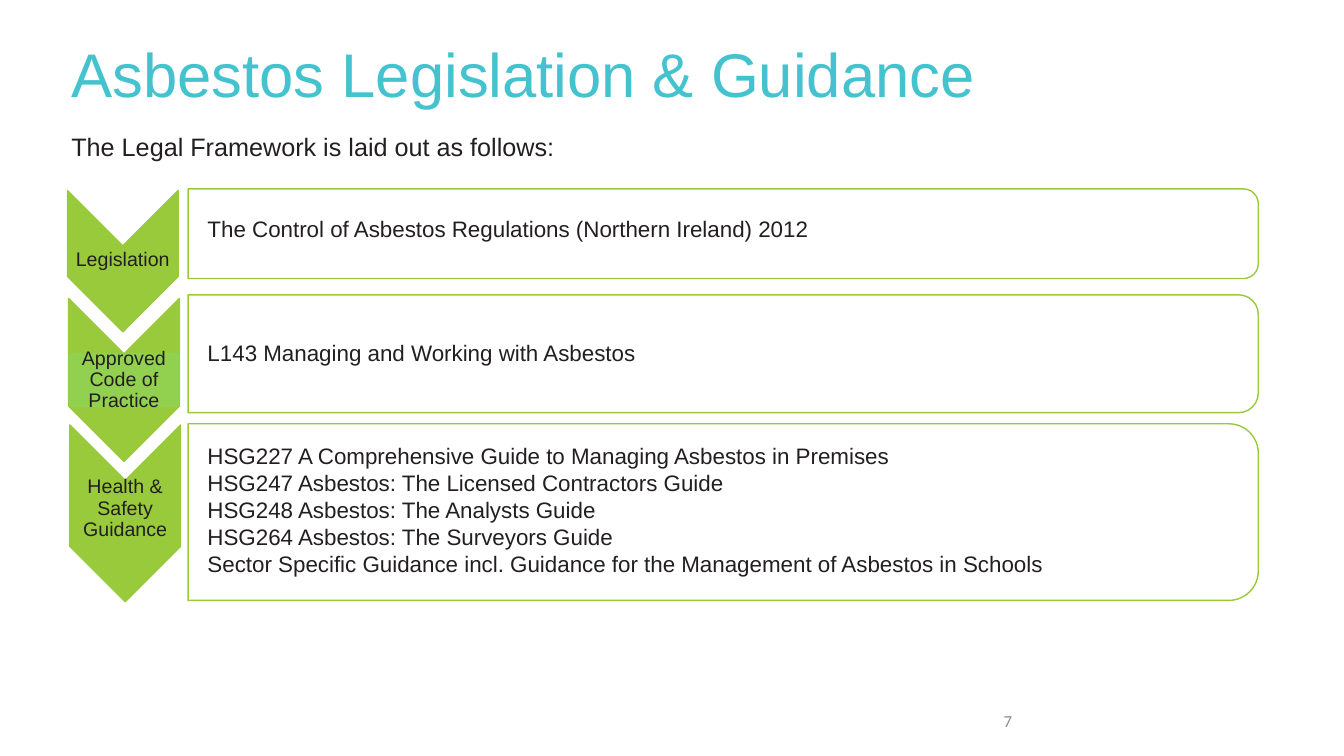
"""Build the slide on asbestos legislation and guidance."""
from dataclasses import dataclass

from pptx import Presentation
from pptx.dml.color import RGBColor
from pptx.enum.shapes import MSO_SHAPE as Preset
from pptx.enum.text import MSO_ANCHOR as Anchor, PP_ALIGN as Align
from pptx.shapes.autoshape import Shape
from pptx.slide import Slide
from pptx.util import Cm, Pt

COLOURS = {
    "title": "44C3CF",
    "text": "231F20",
    "number": "8C8C8C",
    "green": "99CA3C",
    "highlight": "92D050",
    "white": "FFFFFF",
}
CHEVRON_WIDTH = 2.79
PANEL_LEFT, PANEL_WIDTH = 4.74, 26.97


@dataclass(frozen=True)
class Area:
    left: float
    top: float
    width: float
    height: float


@dataclass(frozen=True)
class Style:
    size: float
    colour: str = "text"
    font: str = "Arial"
    align: Align = Align.LEFT
    anchor: Anchor = Anchor.TOP
    spacing: float = 1.0


@dataclass(frozen=True)
class Stage:
    label: str
    label_fill: str
    chevron_left: float
    chevron_top: float
    chevron_height: float
    label_top: float
    label_height: float
    panel_top: float
    panel_height: float
    text_centre: float
    lines: tuple[str, ...]


LABEL_STYLE = Style(14, align=Align.CENTER, anchor=Anchor.MIDDLE, spacing=0.9)
BODY_STYLE = Style(16, anchor=Anchor.MIDDLE)

STAGES = (
    Stage("Legislation", "green", 1.7, 4.8, 3.56, 6.22, 0.66, 4.76, 2.26, 5.75,
          ("The Control of Asbestos Regulations (Northern Ireland) 2012",)),
    Stage("Approved Code of Practice", "highlight", 1.73, 7.52, 4.11, 8.92, 1.32,
          7.43, 2.97, 8.89, ("L143 Managing and Working with Asbestos",)),
    Stage("Health & Safety Guidance", "green", 1.76, 10.71, 4.45, 12.12, 1.4,
          10.68, 4.45, 12.84,
          ("HSG227 A Comprehensive Guide to Managing Asbestos in Premises",
           "HSG247 Asbestos: The Licensed Contractors Guide",
           "HSG248 Asbestos: The Analysts Guide",
           "HSG264 Asbestos: The Surveyors Guide",
           "Sector Specific Guidance incl. Guidance for the Management of "
           "Asbestos in Schools")),
)


def colour(name: str) -> RGBColor:
    """Look up a named colour."""
    return RGBColor.from_string(COLOURS[name])


def write(box: Shape, lines: tuple[str, ...], style: Style) -> None:
    """Fill a shape with one paragraph per line."""
    frame = box.text_frame
    frame.word_wrap = True
    frame.vertical_anchor = style.anchor
    for index, line in enumerate(lines):
        para = frame.add_paragraph() if index else frame.paragraphs[0]
        para.text = line
        para.alignment = style.align
        para.line_spacing = style.spacing
        para.font.size = Pt(style.size)
        para.font.name = style.font
        para.font.color.rgb = colour(style.colour)


def add_text(page: Slide, area: Area, lines: tuple[str, ...], style: Style) -> None:
    """Add a text box."""
    box = page.shapes.add_textbox(
        Cm(area.left), Cm(area.top), Cm(area.width), Cm(area.height))
    write(box, lines, style)


def add_block(page: Slide, preset: Preset, area: Area, fill: str, line: str,
              weight: float = 1) -> Shape:
    """Add a filled and outlined preset shape."""
    block = page.shapes.add_shape(
        preset, Cm(area.left), Cm(area.top), Cm(area.width), Cm(area.height))
    block.shadow.inherit = False
    block.fill.solid()
    block.fill.fore_color.rgb = colour(fill)
    block.line.color.rgb = colour(line)
    block.line.width = Pt(weight)
    return block


def add_turned(page: Slide, preset: Preset, area: Area, fill: str) -> None:
    """Add a shape turned by a quarter so that it covers the given area."""
    shift = (area.width - area.height) / 2
    unturned = Area(area.left + shift, area.top - shift, area.height, area.width)
    add_block(page, preset, unturned, fill, "green").rotation = 90


def add_stage(page: Slide, stage: Stage) -> None:
    """Draw one chevron with its label, panel and text."""
    add_turned(page, Preset.CHEVRON,
               Area(stage.chevron_left, stage.chevron_top, CHEVRON_WIDTH,
                    stage.chevron_height), "green")
    label = add_block(page, Preset.RECTANGLE,
                      Area(stage.chevron_left, stage.label_top, CHEVRON_WIDTH,
                           stage.label_height),
                      stage.label_fill, stage.label_fill, 0.75)
    frame = label.text_frame
    frame.margin_left = frame.margin_right = Cm(0.02)
    frame.margin_top = frame.margin_bottom = Cm(0.02)
    write(label, (stage.label,), LABEL_STYLE)
    add_turned(page, Preset.ROUND_2_SAME_RECTANGLE,
               Area(PANEL_LEFT, stage.panel_top, PANEL_WIDTH, stage.panel_height),
               "white")
    height = 0.2 + 0.7 * len(stage.lines)
    add_text(page, Area(4.98, stage.text_centre - height / 2, 25.5, height),
             stage.lines, BODY_STYLE)


def main() -> None:
    """Build and save the deck."""
    deck = Presentation()
    deck.slide_width, deck.slide_height = Cm(33.87), Cm(19.05)
    page = deck.slides.add_slide(deck.slide_layouts[6])
    add_text(page, Area(1.55, 0.79, 23.75, 1.8),
             ("Asbestos Legislation & Guidance",), Style(44, "title"))
    add_text(page, Area(1.55, 3.18, 31.55, 1.02),
             ("The Legal Framework is laid out as follows:",), Style(18))
    for stage in STAGES:
        add_stage(page, stage)
    add_text(page, Area(22.66, 17.65, 3.1, 1.02), ("7",),
             Style(12, "number", "Calibri", Align.RIGHT, Anchor.MIDDLE))
    deck.save("out.pptx")


if __name__ == "__main__":
    main()
